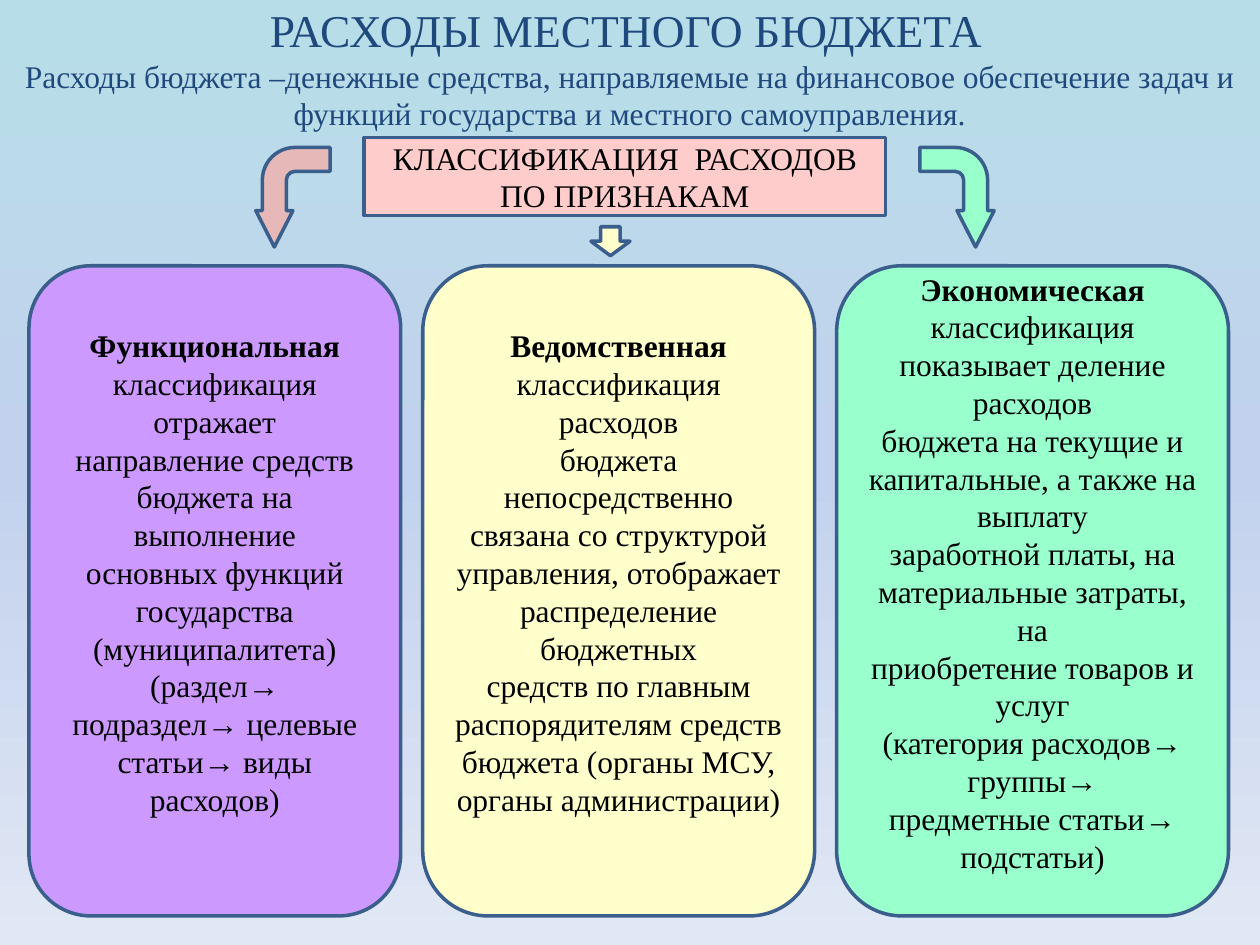
from copy import deepcopy

from pptx import Presentation
from pptx import util as u
from pptx.dml.color import RGBColor
from pptx.enum import shapes, text
from pptx.oxml.ns import qn

WIDTH, HEIGHT = 10, 7.5
FONT = "Times New Roman"
COLORS = {
    "navy": "1F497D", "outline": "3A5F8C", "black": "000000",
    "pink": "FFCCCC", "rose": "E6B9B8", "violet": "CC99FF",
    "yellow": "FFFFCC", "mint": "99FFCC",
}
BACKGROUND = [(0, "B7DEE8"), (0.5, "C2D1ED"), (1, "E1E8F5")]

TITLE = "РАСХОДЫ МЕСТНОГО БЮДЖЕТА"
DEFINITION = (
    "Расходы бюджета –денежные средства, направляемые на финансовое "
    "обеспечение задач и функций государства и местного самоуправления."
)
HEADER = "КЛАССИФИКАЦИЯ  РАСХОДОВ ПО ПРИЗНАКАМ"
CARDS = [
    ("violet", 2.95, "Функциональная\n", [
        "классификация отражает", "направление средств",
        "бюджета на выполнение", "основных функций", "государства",
        "(муниципалитета) (раздел→", "подраздел→ целевые",
        "статьи→ виды расходов)",
    ]),
    ("yellow", 3.11, "Ведомственная\n", [
        "классификация расходов", "бюджета непосредственно",
        "связана со структурой", "управления, отображает",
        "распределение бюджетных", "средств по главным",
        "распорядителям средств", "бюджета (органы МСУ,",
        "органы администрации)",
    ]),
    ("mint", 3.11, "Экономическая ", [
        "классификация", "показывает деление расходов",
        "бюджета на текущие и", "капитальные, а также на выплату",
        "заработной платы, на", "материальные затраты, на",
        "приобретение товаров и услуг", "(категория расходов→ группы→",
        "предметные статьи→ подстатьи)",
    ]),
]
CARD_LEFT, CARD_TOP, CARD_HEIGHT, CARD_GAP = 0.23, 2.11, 5.16, 0.175
BENT_ARROWS = [("mint", 7.2, False), ("rose", 1.93, True)]
BENT_ADJUSTMENTS = (0.322, 0.25, 0.489, 0.438)


def rgb(name):
    return RGBColor.from_string(COLORS[name])


def inches(box):
    return [u.Inches(length) for length in box]


def style_run(run, size, color, bold=False):
    run.font.name = FONT
    run.font.size = u.Pt(size)
    run.font.bold = bold
    run.font.color.rgb = rgb(color)


def write(shape, content, size=18, color="black", bold=False):
    frame = shape.text_frame
    frame.word_wrap = True
    frame.vertical_anchor = text.MSO_ANCHOR.MIDDLE
    paragraph = frame.paragraphs[0]
    paragraph.text = content
    paragraph.alignment = text.PP_ALIGN.CENTER
    for run in paragraph.runs:
        style_run(run, size, color, bold)
    return paragraph


def add_shape(slide, kind, box, fill):
    shape = slide.shapes.add_shape(kind, *inches(box))
    shape.shadow.inherit = False
    shape.fill.solid()
    shape.fill.fore_color.rgb = rgb(fill)
    shape.line.color.rgb = rgb("outline")
    shape.line.width = u.Pt(2)
    return shape


def paint_background(slide):
    fill = slide.background.fill
    fill.gradient()
    fill.gradient_angle = 270
    stop_list = slide.element.find(".//" + qn("a:gsLst"))
    stop_list.append(deepcopy(stop_list[-1]))
    for stop, (position, color) in zip(fill.gradient_stops, BACKGROUND):
        stop.position = position
        stop.color.rgb = RGBColor.from_string(color)


def add_cards(slide):
    left = CARD_LEFT
    for fill, width, heading, lines in CARDS:
        card = add_shape(slide, shapes.MSO_SHAPE.ROUNDED_RECTANGLE,
                         (left, CARD_TOP, width, CARD_HEIGHT), fill)
        paragraph = write(card, heading, bold=True)
        for line in lines:
            run = paragraph.add_run()
            run.text = line
            style_run(run, 18, "black")
            paragraph.add_line_break()
        left += width + CARD_GAP


def add_arrows(slide):
    for fill, left, flipped in BENT_ARROWS:
        arrow = add_shape(slide, shapes.MSO_SHAPE.BENT_ARROW,
                          (left, 1.27, 0.79, 0.59), fill)
        for index, value in enumerate(BENT_ADJUSTMENTS):
            arrow.adjustments[index] = value
        arrow.rotation = 90
        if flipped:
            arrow.element.spPr.find(qn("a:xfrm")).set("flipV", "1")
    add_shape(slide, shapes.MSO_SHAPE.DOWN_ARROW, (4.69, 1.8, 0.31, 0.23), "yellow")


def main():
    presentation = Presentation()
    presentation.slide_width, presentation.slide_height = inches((WIDTH, HEIGHT))
    slide = presentation.slides.add_slide(presentation.slide_layouts[6])
    paint_background(slide)
    for content, box, size in [(TITLE, (0.47, 0, 9, 0.47), 26),
                               (DEFINITION, (0, 0.47, WIDTH, 0.56), 18)]:
        write(slide.shapes.add_textbox(*inches(box)), content, size, "navy")
    header = add_shape(slide, shapes.MSO_SHAPE.RECTANGLE, (2.89, 1.09, 4.14, 0.62), "pink")
    write(header, HEADER)
    add_cards(slide)
    add_arrows(slide)
    presentation.save("out.pptx")


if __name__ == "__main__":
    main()
